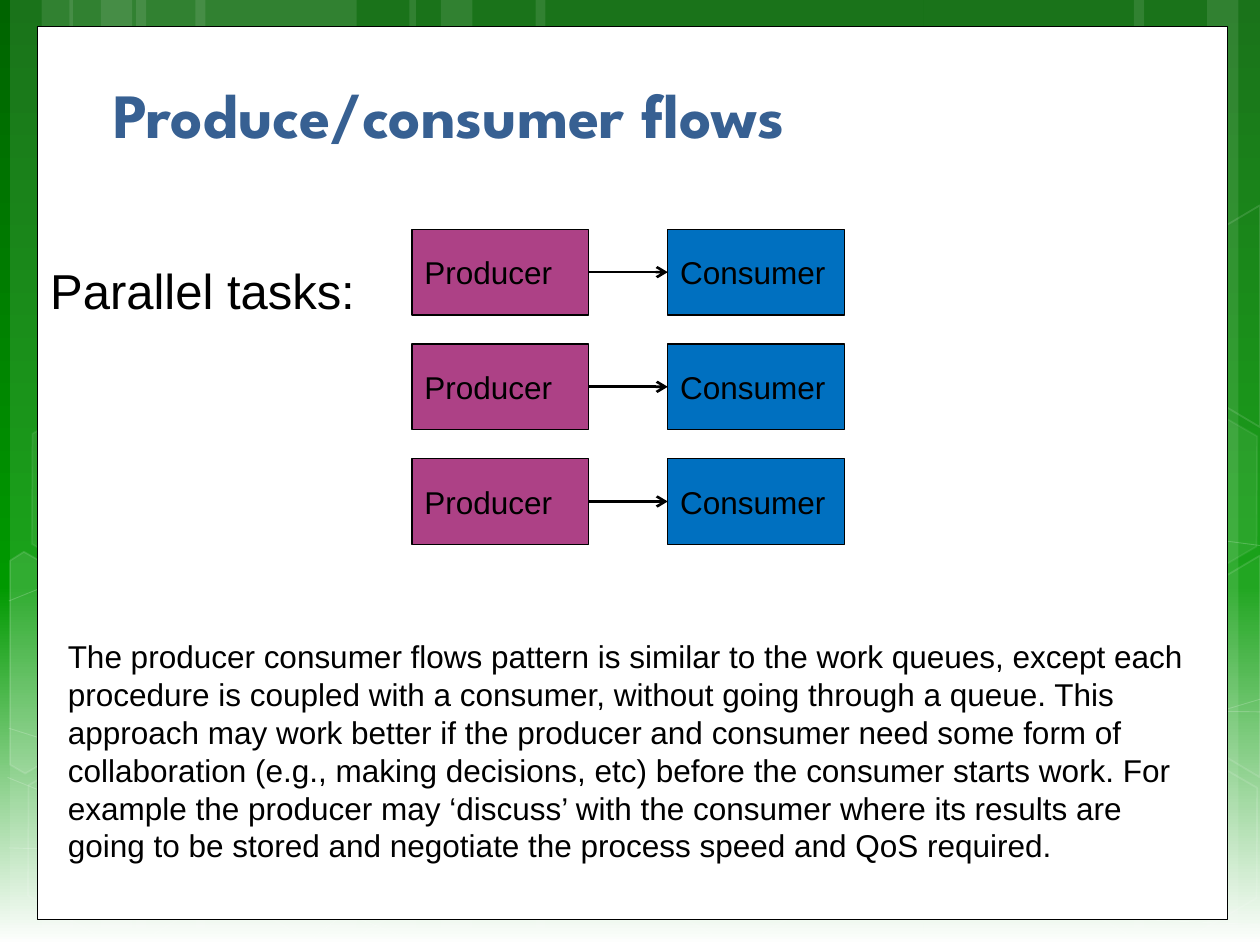
"""Build the producer/consumer flows slide."""
from copy import deepcopy

from lxml.etree import SubElement
from pptx import Presentation
from pptx.dml.color import RGBColor
from pptx.enum.shapes import MSO_CONNECTOR, MSO_SHAPE
from pptx.enum.text import MSO_ANCHOR
from pptx.oxml.ns import qn
from pptx.util import Inches, Pt

WHITE = RGBColor(0xFF, 0xFF, 0xFF)
BLACK = RGBColor(0, 0, 0)
DARK_GREEN = RGBColor(0x00, 0x64, 0x00)
GREEN = RGBColor(0x00, 0x99, 0x00)
TITLE_BLUE = RGBColor(0x37, 0x60, 0x92)
PURPLE = RGBColor(0xAD, 0x41, 0x86)
BLUE = RGBColor(0x00, 0x70, 0xC0)


def paint(shape, fill, line, width=0.5, fill_alpha=100, line_alpha=100):
    shape.shadow.inherit = False
    for target, color, alpha in ((shape.fill, fill, fill_alpha),
                                 (shape.line.fill, line, line_alpha)):
        if color is None or alpha == 0:
            target.background()
            continue
        target.solid()
        target.fore_color.rgb = color
        if alpha < 100:
            properties = shape._element.spPr
            parent = properties if target is shape.fill else properties.find(qn("a:ln"))
            color_element = parent.find(qn("a:solidFill"))[0]
            SubElement(color_element, qn("a:alpha"), val=str(alpha * 1000))
    if line is not None:
        shape.line.width = Pt(width)


def write(shape, text, size, font="Arial", color=BLACK, bold=False,
          wrap=False, anchor=MSO_ANCHOR.TOP):
    frame = shape.text_frame
    frame.word_wrap = wrap
    frame.vertical_anchor = anchor
    paragraph = frame.paragraphs[0]
    paragraph.text = text
    paragraph.font.size = Pt(size)
    paragraph.font.name = font
    paragraph.font.bold = bold
    paragraph.font.color.rgb = color


presentation = Presentation()
presentation.slide_width = Inches(10)
presentation.slide_height = Inches(7.5)
slide = presentation.slides.add_slide(presentation.slide_layouts[6])
shapes = slide.shapes

background = slide.background.fill
background.gradient()
background.gradient_angle = 270
stop_list = slide._element.find(".//" + qn("a:gsLst"))
stop_list.append(deepcopy(stop_list[-1]))
stops = ((0, DARK_GREEN), (0.62, GREEN), (1, WHITE))
for stop, (position, color) in zip(background.gradient_stops, stops):
    stop.position = position
    stop.color.rgb = color

bands = ((1.08, 1.75), (0.08, 0.5), (0.33, 0.83), (1.55, 1.75), (0.55, 0.5),
         (0.8, 0.83), (7.33, 1.75), (9.58, 0.42), (9, 0.83), (4.25, 3.08),
         (3.25, 0.5), (3.5, 0.83))
for left, width in bands:
    band = shapes.add_shape(MSO_SHAPE.RECTANGLE, Inches(left), 0,
                            Inches(width), Inches(7.5))
    paint(band, WHITE, None, fill_alpha=10)

hexagons = ((3.34, 0.36, 4, 8), (4.97, 5.89, 6, 12), (0.11, 5.91, 0, 12),
            (0.14, 3.12, 7, 8), (1.74, 5.92, 0, 12), (8.34, 5.93, 0, 12),
            (8.34, 3.14, 7, 8))
for left, top, fill_alpha, line_alpha in hexagons:
    hexagon = shapes.add_shape(MSO_SHAPE.HEXAGON, Inches(left), Inches(top),
                               Inches(1.75), Inches(1.52))
    hexagon.adjustments[0] = 0.285
    hexagon.adjustments[1] = 1.155
    hexagon.rotation = 30
    paint(hexagon, WHITE, WHITE, 1, fill_alpha, line_alpha)

waves = (
    ((0.07, 6.73), (1.9, 6.78), (4.58, 6.65), (7.92, 6.17), (10, 5.55)),
    ((0.07, 4.77), (1.21, 4.31), (3.47, 3.87), (6.54, 3.87), (10, 4.33)),
    ((0.06, 6.17), (3.34, 7.49)),
    ((0.07, 5.78), (1.28, 6.16), (3.57, 6.73), (6.28, 7.18), (10, 7.34)),
    ((2.42, 7.49), (3.88, 6.39), (6.08, 5.78), (7.94, 5.62), (10, 5.65)),
)
cut_hexagons = (
    (((0.08, 4.45), (0.19, 4.38), (0.96, 4.82), (0.95, 5.7), (0.2, 6.14), (0.08, 6.07)), 10),
    (((9.26, 4.85), (10, 4.41), (10, 6.17), (9.26, 5.73)), 4),
    (((9.26, 2.07), (10, 1.63), (10, 3.39), (9.26, 2.95)), 0),
)
outlines = [(points, 0, False, 0.5, 20) for points in waves]
outlines += [(points, alpha, True, 1, 12) for points, alpha in cut_hexagons]
for points, fill_alpha, closed, width, line_alpha in outlines:
    start, *rest = [(Inches(x), Inches(y)) for x, y in points]
    builder = shapes.build_freeform(*start)
    builder.add_line_segments(rest, close=closed)
    paint(builder.convert_to_shape(), WHITE, WHITE, width, fill_alpha, line_alpha)

panel = shapes.add_shape(MSO_SHAPE.RECTANGLE, Inches(0.3), Inches(0.21),
                         Inches(9.44), Inches(7.09))
paint(panel, WHITE, BLACK)

title = shapes.add_textbox(Inches(0.8), Inches(0.49), Inches(8.42), Inches(0.76))
write(title, "Produce/consumer flows", 36, "League Spartan", TITLE_BLUE,
      bold=True, wrap=True, anchor=MSO_ANCHOR.BOTTOM)

box_width, box_height = 1.4, 0.68
producer_left, consumer_left = 3.27, 5.3
for row in range(3):
    top = 1.82 + 0.91 * row
    for left, name, color in ((producer_left, "Producer", PURPLE),
                              (consumer_left, "Consumer", BLUE)):
        box = shapes.add_shape(MSO_SHAPE.ROUNDED_RECTANGLE, Inches(left), Inches(top),
                               Inches(box_width), Inches(box_height))
        box.adjustments[0] = 0
        paint(box, color, BLACK, 0.75)
        write(box, name, 18, anchor=MSO_ANCHOR.MIDDLE)
        box.text_frame.paragraphs[0].alignment = 1
    middle = Inches(top + box_height / 2)
    arrow = shapes.add_connector(MSO_CONNECTOR.STRAIGHT,
                                 Inches(producer_left + box_width), middle,
                                 Inches(consumer_left), middle)
    arrow.line.color.rgb = BLACK
    arrow.line.width = Pt(1.5)
    SubElement(arrow.line._get_or_add_ln(), qn("a:tailEnd"), type="arrow")
    SubElement(arrow._element.spPr, qn("a:effectLst"))

label = shapes.add_textbox(Inches(0.3), Inches(2.02), Inches(2.65), Inches(0.57))
write(label, "Parallel tasks:", 28)

description = shapes.add_textbox(Inches(0.44), Inches(5.01), Inches(9.06), Inches(1.92))
write(description,
      "The producer consumer flows pattern is similar to the work queues, except each "
      "procedure is coupled with a consumer, without going through a queue. This approach "
      "may work better if the producer and consumer need some form of collaboration (e.g., "
      "making decisions, etc) before the consumer starts work. For example the producer may "
      "‘discuss’ with the consumer where its results are going to be stored and negotiate "
      "the process speed and QoS required.", 18, wrap=True)

presentation.save("out.pptx")
